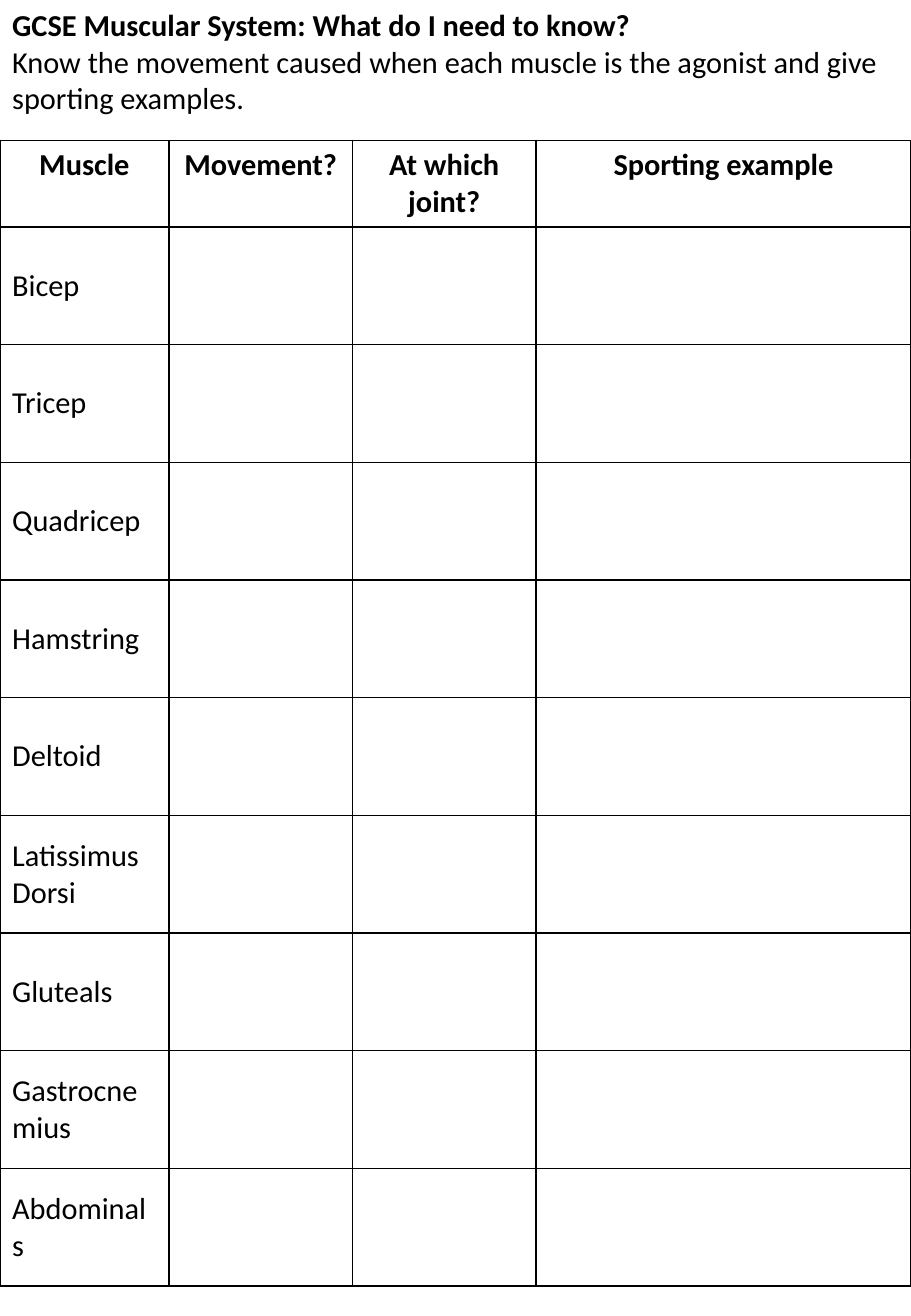
from dataclasses import dataclass

from lxml import etree
from pptx import Presentation
from pptx.dml.color import RGBColor
from pptx.enum.text import MSO_ANCHOR, MSO_AUTO_SIZE, PP_ALIGN
from pptx.oxml.ns import qn
from pptx.util import Cm, Pt

TOP, MIDDLE = MSO_ANCHOR.TOP, MSO_ANCHOR.MIDDLE
LEFT, CENTER = PP_ALIGN.LEFT, PP_ALIGN.CENTER
NO_AUTOFIT = MSO_AUTO_SIZE.NONE


@dataclass(frozen=True)
class Theme:
    font: str = "Calibri"
    size: int = 18
    ink: str = "000000"
    rule: int = 1


THEME = Theme()


def write(frame, text, bold, align):
    paragraph = frame.paragraphs[0]
    paragraph.alignment = align
    paragraph.space_before = Pt(0)
    paragraph.line_spacing = 1.0
    run = paragraph.add_run()
    run.text = text
    run.font.name = THEME.font
    run.font.size = Pt(THEME.size)
    run.font.bold = bold
    run.font.color.rgb = RGBColor.from_string(THEME.ink)
    return paragraph


def rule_cell(cell):
    properties = cell._tc.get_or_add_tcPr()
    for side in ("a:lnL", "a:lnR", "a:lnT", "a:lnB"):
        line = etree.SubElement(properties, qn(side), w=str(Pt(THEME.rule)))
        fill = etree.SubElement(line, qn("a:solidFill"))
        etree.SubElement(fill, qn("a:srgbClr"), val=THEME.ink)
    cell.fill.background()


PAGE_WIDTH = 19.05
HEADING_HEIGHT = 0.9
INTRO_HEIGHT = 1.67
TABLE_TOP = 2.94
HEADER_HEIGHT = 1.78
ROW_HEIGHT = 2.46

COLUMNS = [
    ("Muscle", 3.53),
    ("Movement?", 3.84),
    ("At which joint?", 3.84),
    ("Sporting example", 7.84),
]
MUSCLES = [
    "Bicep", "Tricep", "Quadricep", "Hamstring", "Deltoid",
    "Latissimus Dorsi", "Gluteals", "Gastrocnemius", "Abdominals",
]

prs = Presentation()
prs.slide_width = Cm(PAGE_WIDTH)
prs.slide_height = Cm(27.51)
slide = prs.slides.add_slide(prs.slide_layouts[1])

heading = slide.shapes.title
intro = slide.placeholders[1]
for part, top, height, inset in (
    (heading, 0, HEADING_HEIGHT, 0.13),
    (intro, HEADING_HEIGHT, INTRO_HEIGHT, 0),
):
    part.left, part.top = Cm(0), Cm(top)
    part.width, part.height = Cm(PAGE_WIDTH), Cm(height)
    frame = part.text_frame
    frame.word_wrap = True
    frame.auto_size = NO_AUTOFIT
    frame.vertical_anchor = TOP
    frame.margin_top, frame.margin_bottom = Cm(inset), Cm(0)

write(heading.text_frame, "GCSE Muscular System: What do I need to know?", True, LEFT)
task = write(
    intro.text_frame,
    "Know the movement caused when each muscle is the agonist and give sporting examples.",
    False,
    LEFT,
)
task_properties = task._p.get_or_add_pPr()
task_properties.set("marL", "0")
task_properties.set("indent", "0")
etree.SubElement(task_properties, qn("a:buNone"))

worksheet = slide.shapes.add_table(
    len(MUSCLES) + 1, len(COLUMNS), Cm(0), Cm(TABLE_TOP),
    Cm(PAGE_WIDTH), Cm(HEADER_HEIGHT + ROW_HEIGHT * len(MUSCLES)),
).table
worksheet.first_row = False
worksheet.horz_banding = False

for row in worksheet.rows:
    row.height = Cm(ROW_HEIGHT)
    for cell in row.cells:
        rule_cell(cell)
worksheet.rows[0].height = Cm(HEADER_HEIGHT)

for index, (label, width) in enumerate(COLUMNS):
    worksheet.columns[index].width = Cm(width)
    write(worksheet.cell(0, index).text_frame, label, True, CENTER)

for index, muscle in enumerate(MUSCLES, start=1):
    muscle_cell = worksheet.cell(index, 0)
    muscle_cell.vertical_anchor = MIDDLE
    write(muscle_cell.text_frame, muscle, False, LEFT)

prs.save("out.pptx")
